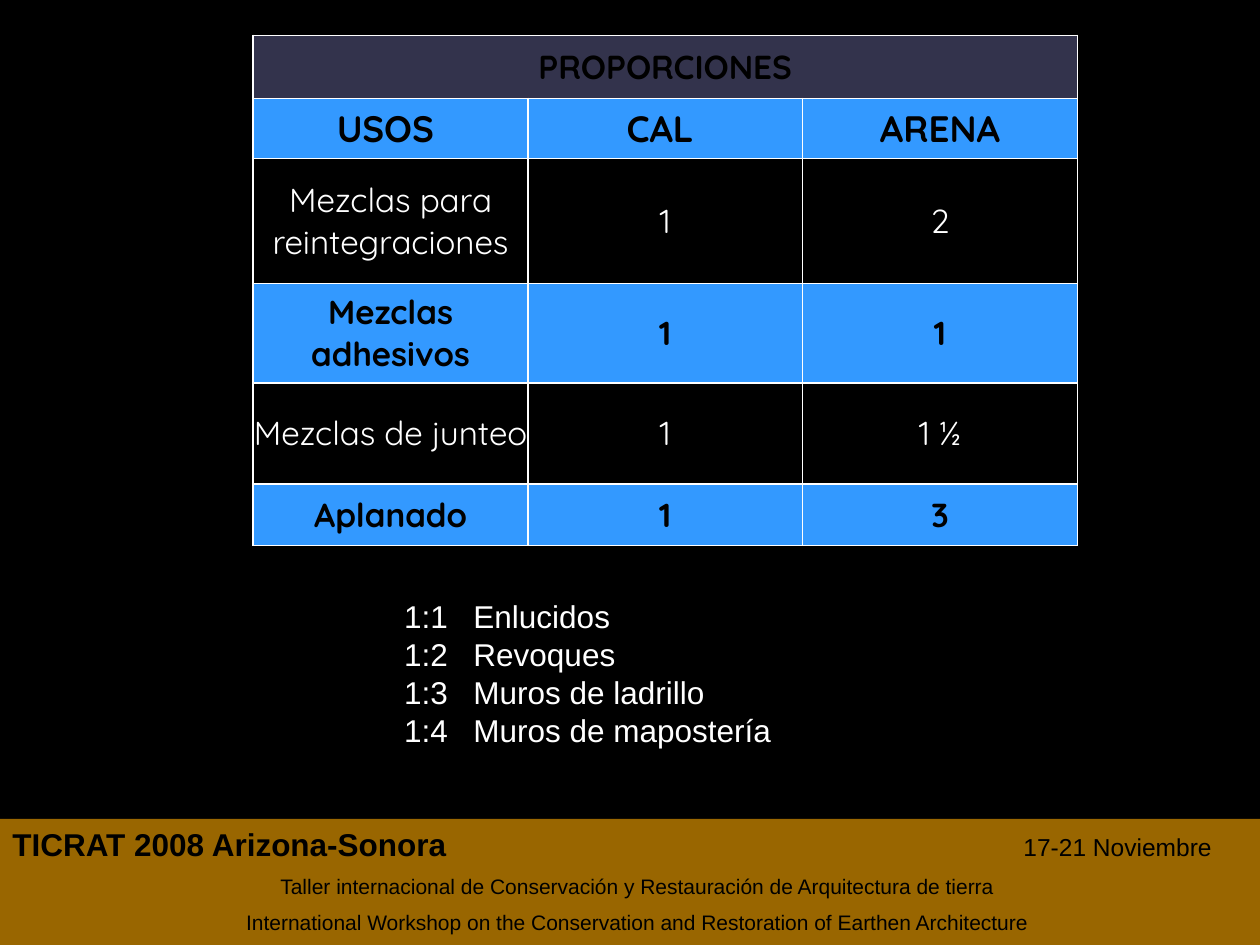
"""Builds a slide with the lime and sand proportions for earthen mixes."""
from lxml import etree
from pptx import Presentation
from pptx import util as u
from pptx.dml.color import RGBColor
from pptx.enum import shapes, text
from pptx.oxml.ns import qn

BLACK, WHITE, BLUE, SLATE, OCHRE = "000000", "FFFFFF", "3399FF", "666699", "996600"
COLUMN_WIDTH = 2.18
ROW_HEIGHTS = [0.5, 0.48, 0.99, 0.79, 0.8, 0.49]
PROPORTIONS = [
    ["PROPORCIONES", "", ""],
    ["USOS ", "CAL ", "ARENA"],
    ["Mezclas para reintegraciones", "1", "2"],
    ["Mezclas adhesivos", "1", "1"],
    ["Mezclas de junteo", "1", "1 ½"],
    ["Aplanado", "1", "3"],
]
RATIOS = ["1:1\tEnlucidos", "1:2\tRevoques", "1:3\tMuros de ladrillo", "1:4\tMuros de mapostería"]
WORKSHOP_NAMES = [
    "Taller internacional de Conservación y Restauración de Arquitectura de tierra",
    "International Workshop on the Conservation and Restoration of Earthen Architecture",
]


def set_fill(fill, color):
    """Fill with a solid hex colour."""
    fill.solid()
    fill.fore_color.rgb = RGBColor.from_string(color)


def set_font(font, name, size, color, bold=False):
    """Format a font."""
    font.name, font.size, font.bold = name, u.Pt(size), bold
    font.color.rgb = RGBColor.from_string(color)


def add_tab(paragraph, position, alignment):
    """Add a tab stop, measured in inches from the text edge."""
    tabs = etree.SubElement(paragraph._p.get_or_add_pPr(), qn("a:tabLst"))
    etree.SubElement(tabs, qn("a:tab"), pos=str(u.Inches(position)), algn=alignment)


def set_borders(cell, color):
    """Draw a one-point line on each side of a cell."""
    properties = cell._tc.get_or_add_tcPr()
    for index, side in enumerate(["a:lnL", "a:lnR", "a:lnT", "a:lnB"]):
        line = etree.Element(qn(side), w=str(u.Pt(1)))
        solid = etree.SubElement(line, qn("a:solidFill"))
        etree.SubElement(solid, qn("a:srgbClr"), val=color)
        properties.insert(index, line)


def format_cell(cell, row):
    """Style a cell by its row: title, headings, then plain and blue rows in turn."""
    plain = row in (2, 4)
    if plain:
        cell.fill.background()
    else:
        set_fill(cell.fill, BLUE if row else SLATE)
    if row == 0:
        color = cell._tc.tcPr.find(".//" + qn("a:srgbClr"))
        etree.SubElement(color, qn("a:alpha"), val="50000")
    set_borders(cell, WHITE)
    cell.margin_left = cell.margin_right = cell.margin_top = cell.margin_bottom = 0
    cell.vertical_anchor = text.MSO_ANCHOR.MIDDLE
    paragraph = cell.text_frame.paragraphs[0]
    paragraph.alignment = text.PP_ALIGN.CENTER
    set_font(paragraph.font, "Quicksand", 21 if row == 1 else 19, WHITE if plain else BLACK, not plain)
    for run in paragraph.runs:
        run.font.name = "Quicksand"


def add_proportions_table(slide):
    """Add the table of proportions."""
    columns = len(PROPORTIONS[0])
    frame = slide.shapes.add_table(
        len(PROPORTIONS), columns, u.Inches(2.01), u.Inches(0.28),
        u.Inches(columns * COLUMN_WIDTH), u.Inches(sum(ROW_HEIGHTS)))
    table = frame.table
    table.first_row = table.horz_banding = False
    for column in table.columns:
        column.width = u.Inches(COLUMN_WIDTH)
    for row, (height, labels) in enumerate(zip(ROW_HEIGHTS, PROPORTIONS)):
        table.rows[row].height = u.Inches(height)
        for column, label in enumerate(labels):
            cell = table.cell(row, column)
            cell.text_frame.text = label
            format_cell(cell, row)
    table.cell(0, 0).merge(table.cell(0, columns - 1))


def add_footer(slide):
    """Add the band with the event, its date and the workshop names."""
    band = slide.shapes.add_shape(
        shapes.MSO_SHAPE.RECTANGLE, u.Inches(0), u.Inches(6.5), u.Inches(10.12), u.Inches(1))
    band.shadow.inherit = False
    set_fill(band.fill, OCHRE)
    band.line.fill.background()
    frame = band.text_frame
    frame.word_wrap = True
    frame.vertical_anchor = text.MSO_ANCHOR.TOP
    heading = frame.paragraphs[0]
    heading.alignment = text.PP_ALIGN.LEFT
    add_tab(heading, 9.52, "r")
    for label, size, bold in [("TICRAT 2008 Arizona-Sonora", 18, True), ("\t17-21 Noviembre", 14, False)]:
        run = heading.add_run()
        run.text = label
        set_font(run.font, "Arial", size, BLACK, bold)
    for name in WORKSHOP_NAMES:
        paragraph = frame.add_paragraph()
        paragraph.text = name
        paragraph.alignment = text.PP_ALIGN.CENTER
        paragraph.space_before = u.Pt(6)
        set_font(paragraph.runs[0].font, "Arial", 12, BLACK)


def add_ratio_list(slide):
    """Add the list of ratios and their uses."""
    box = slide.shapes.add_textbox(u.Inches(3.11), u.Inches(4.69), u.Inches(3.84), u.Inches(1.3))
    frame = box.text_frame
    frame.word_wrap = True
    frame.vertical_anchor = text.MSO_ANCHOR.MIDDLE
    frame.text = "\n".join(RATIOS)
    for paragraph in frame.paragraphs:
        add_tab(paragraph, 0.55, "l")
        for run in paragraph.runs:
            set_font(run.font, "Arial", 18, WHITE)


def main():
    """Build and save the presentation."""
    presentation = Presentation()
    presentation.slide_width, presentation.slide_height = u.Inches(10), u.Inches(7.5)
    slide = presentation.slides.add_slide(presentation.slide_layouts[6])
    set_fill(slide.background.fill, BLACK)
    add_proportions_table(slide)
    add_footer(slide)
    add_ratio_list(slide)
    presentation.save("out.pptx")


if __name__ == "__main__":
    main()
